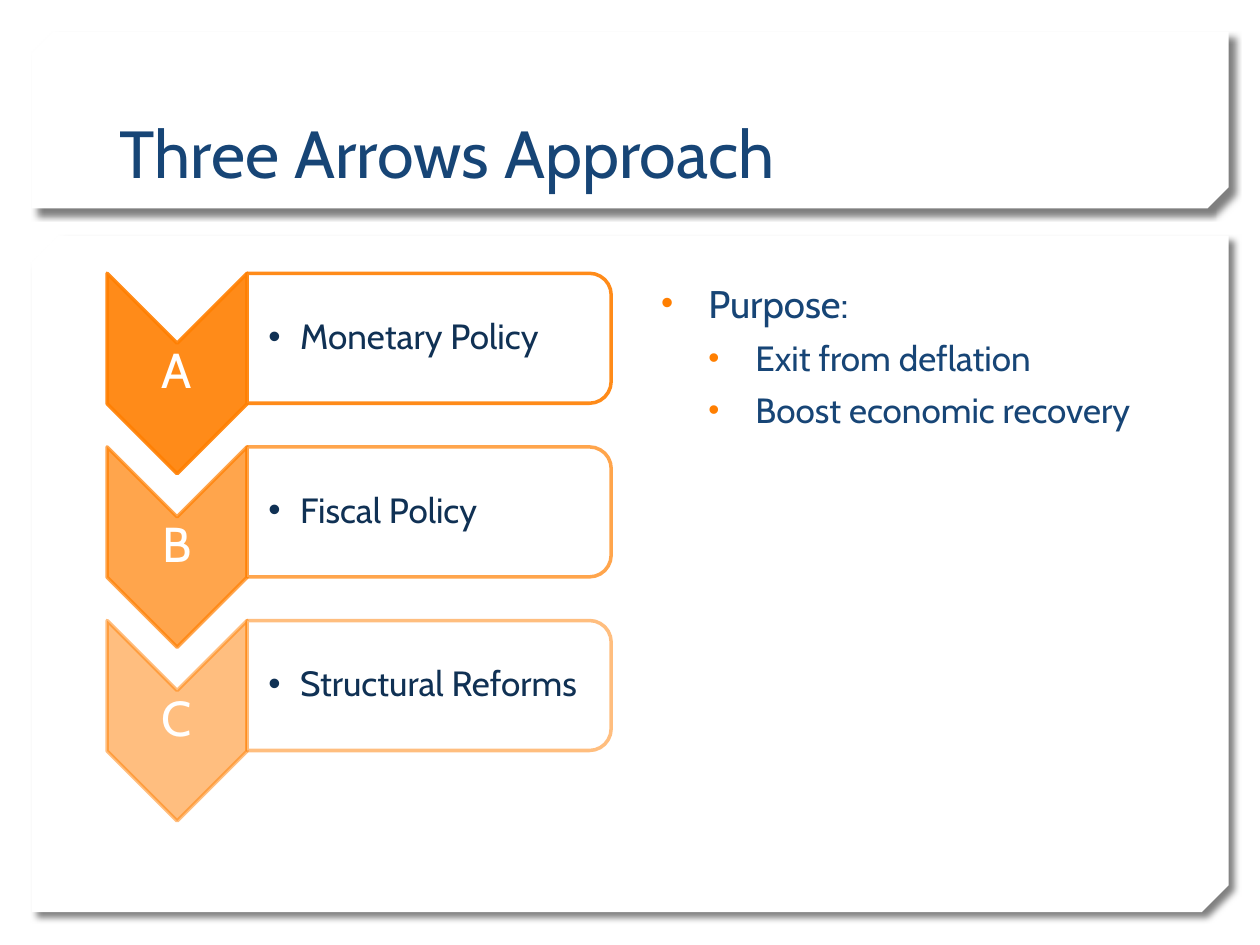
from pptx import Presentation, util as u
from pptx.dml.color import RGBColor
from pptx.enum import shapes, text
from pptx.oxml.ns import qn
from lxml import etree

Form = shapes.MSO_SHAPE
Anchor = text.MSO_ANCHOR
ORANGE, WHITE, BLUE, NAVY = "FF7F01", "FFFFFF", "174576", "103154"


def color(code):
    return RGBColor.from_string(code)


def node(parent, tag, **attrs):
    item = etree.SubElement(parent, qn(tag))
    for name, value in attrs.items():
        item.set(name, str(value))
    return item


def paint(fill, code, alpha=100):
    fill.solid()
    fill.fore_color.rgb = color(code)
    if alpha < 100:
        tint = fill._xPr.find(qn("a:solidFill"))[0]
        node(tint, "a:alpha", val=alpha * 1000)


class Deck:
    font = "Cabin"

    def __init__(self, wide, high):
        self.show = Presentation()
        self.show.slide_width, self.show.slide_height = u.Cm(wide), u.Cm(high)
        self.slide = self.show.slides.add_slide(self.show.slide_layouts[6])

    def shape(self, form, box, fill, alpha=100, edge=None, fade=100, turn=0):
        item = self.slide.shapes.add_shape(form, *map(u.Cm, box))
        item.rotation = turn
        item.shadow.inherit = False
        paint(item.fill, fill, alpha)
        if edge:
            paint(item.line.fill, edge, fade)
            item.line.width = u.Pt(2)
        else:
            item.line.fill.background()
        return item

    def panel(self, top, high, snip):
        item = self.shape(Form.SNIP_2_DIAG_RECTANGLE, (0.64, top, 24.13, high), WHITE)
        item.adjustments[0], item.adjustments[1] = snip, 0
        glow = item._element.spPr.find(qn("a:effectLst"))
        cast = node(glow, "a:outerShdw", blurRad=u.Pt(4), dist=u.Pt(5),
                    dir=45 * 60000, algn="tl", rotWithShape=0)
        node(node(cast, "a:srgbClr", val="000000"), "a:alpha", val=50000)

    def frame(self, box, anchor=Anchor.TOP, pad=(0.25, 0.13, 0.25, 0.13)):
        area = self.slide.shapes.add_textbox(*map(u.Cm, box)).text_frame
        area.word_wrap = True
        area.vertical_anchor = anchor
        (area.margin_left, area.margin_top,
         area.margin_right, area.margin_bottom) = map(u.Cm, pad)
        return area

    def label(self, para, words, size, code, align=None, space=None, before=None):
        para.text = words
        para.alignment = align
        para.line_spacing = space
        if before:
            para.space_before = u.Pt(before)
        para.font.name = self.font
        para.font.size = u.Pt(size)
        para.font.color.rgb = color(code)

    def bullet(self, para, left, hang, tint=None):
        props = para._p.get_or_add_pPr()
        props.set("marL", str(u.Cm(left)))
        props.set("indent", str(-u.Cm(hang)))
        if tint:
            node(node(props, "a:buClr"), "a:srgbClr", val=tint)
            node(props, "a:buSzPct", val=90000)
        node(props, "a:buFont", typeface="Arial")
        node(props, "a:buChar", char="•")

    def arrow(self, mark, words, drop, fade):
        self.shape(Form.CHEVRON, (1.55, 6.12 + drop, 4.04, 2.82),
                   ORANGE, fade, ORANGE, fade, 90)
        area = self.frame((2.16, 6.91 + drop, 2.82, 1.22), Anchor.MIDDLE, (0.05,) * 4)
        self.label(area.paragraphs[0], mark, 28, WHITE, text.PP_ALIGN.CENTER, 0.9)
        self.shape(Form.ROUND_2_SAME_RECTANGLE, (7.34, 3.15 + drop, 2.62, 7.34),
                   WHITE, 90, ORANGE, fade, 90)
        area = self.frame((5, 5.64 + drop, 7.21, 2.36), Anchor.MIDDLE,
                          (0.41, 0.03, 0.03, 0.03))
        para = area.paragraphs[0]
        self.bullet(para, 0.64, 0.64)
        self.label(para, words, 20, NAVY, space=0.9)

    def points(self, box, head, items):
        area = self.frame(box)
        para = area.paragraphs[0]
        self.bullet(para, 0.95, 0.95, ORANGE)
        self.label(para, head, 22, BLUE, before=20)
        for words in items:
            para = area.add_paragraph()
            para.level = 1
            self.bullet(para, 1.9, 0.95, ORANGE)
            self.label(para, words, 20, BLUE, before=6)


def main():
    deck = Deck(25.4, 19.05)
    deck.panel(4.75, 13.64, 0.04)
    deck.panel(0.64, 3.56, 0.12)
    title = deck.frame((2.16, 0.81, 21.06, 3.18), Anchor.BOTTOM)
    deck.label(title.paragraphs[0], "Three Arrows Approach", 38, BLUE)
    steps = [("A", "Monetary Policy"), ("B", "Fiscal Policy"), ("C", "Structural Reforms")]
    for row, (mark, words) in enumerate(steps):
        deck.arrow(mark, words, 3.5 * row, 90 - 20 * row)
    deck.points((13.08, 5.51, 10.16, 11.05), "Purpose:",
                ["Exit from deflation", "Boost economic recovery"])
    deck.show.save("out.pptx")


if __name__ == "__main__":
    main()
